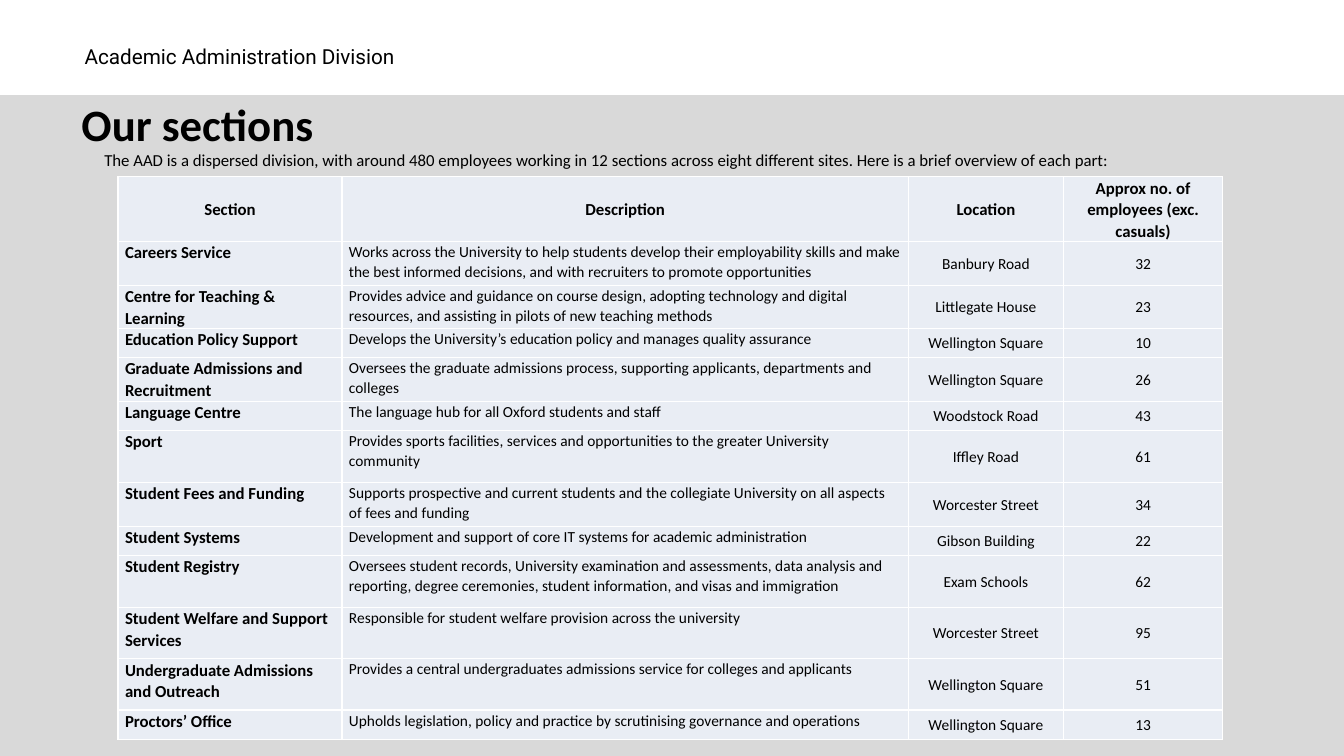
from lxml.etree import SubElement
from pptx import Presentation
from pptx.dml.color import RGBColor
from pptx.enum.shapes import MSO_SHAPE as Shape
from pptx.enum.text import MSO_ANCHOR as Anchor, MSO_AUTO_SIZE as AutoSize, PP_ALIGN as Align
from pptx.oxml.ns import qn
from pptx.util import Pt

HEADINGS = ("Section", "Description", "Location", "Approx no. of employees (exc. casuals)")
COLUMN_WIDTHS = (160, 404.6, 110.8, 113.7)
HEADING_HEIGHT = 36.7
ONE_LINE, TWO_LINES, TALL, ROOMY = 20.8, 31.3, 37.2, 36.7
SECTIONS = (
    (TWO_LINES, "Careers Service",
     "Works across the University to help students develop their employability skills and "
     "make the best informed decisions, and with recruiters to promote opportunities",
     "Banbury Road", 32),
    (ONE_LINE, "Centre for Teaching & Learning",
     "Provides advice and guidance on course design, adopting technology and digital "
     "resources, and assisting in pilots of new teaching methods",
     "Littlegate House", 23),
    (ONE_LINE, "Education Policy Support",
     "Develops the University’s education policy and manages quality assurance",
     "Wellington Square", 10),
    (TWO_LINES, "Graduate Admissions and Recruitment",
     "Oversees the graduate admissions process, supporting applicants, departments and colleges",
     "Wellington Square", 26),
    (ONE_LINE, "Language Centre",
     "The language hub for all Oxford students and staff",
     "Woodstock Road", 43),
    (TALL, "Sport",
     "Provides sports facilities, services and opportunities to the greater University community",
     "Iffley Road", 61),
    (TWO_LINES, "Student Fees and Funding",
     "Supports prospective and current students and the collegiate University on all aspects "
     "of fees and funding",
     "Worcester Street", 34),
    (ONE_LINE, "Student Systems",
     "Development and support of core IT systems for academic administration",
     "Gibson Building", 22),
    (TALL, "Student Registry",
     "Oversees student records, University examination and assessments, data analysis and "
     "reporting, degree ceremonies, student information, and visas and immigration",
     "Exam Schools", 62),
    (ROOMY, "Student Welfare and Support Services",
     "Responsible for student welfare provision across the university",
     "Worcester Street", 95),
    (ROOMY, "Undergraduate Admissions and Outreach",
     "Provides a central undergraduates admissions service for colleges and applicants",
     "Wellington Square", 51),
    (ONE_LINE, "Proctors’ Office",
     "Upholds legislation, policy and practice by scrutinising governance and operations",
     "Wellington Square", 13),
)


def colour(value):
    return RGBColor.from_string(value)


class SectionsSlide:
    """Draws styled elements on one slide, with all lengths in points."""

    ink, panel_fill, cell_fill, border = "000000", "D9D9D9", "E9EDF4", "FFFFFF"
    body_font, banner_font = "Calibri", "Roboto"

    def __init__(self, deck):
        self.slide = deck.slides.add_slide(deck.slide_layouts[5])
        self.shapes = self.slide.shapes

    def set_words(self, frame, words, size, bold=False, font=body_font, align=Align.LEFT):
        paragraph = frame.paragraphs[0]
        paragraph.text = words
        paragraph.alignment = align
        paragraph.font.name = font
        paragraph.font.size = Pt(size)
        paragraph.font.bold = bold
        paragraph.font.color.rgb = colour(self.ink)
        return paragraph

    def panel(self, left, top, width, height):
        panel = self.shapes.add_shape(Shape.RECTANGLE, Pt(left), Pt(top), Pt(width), Pt(height))
        panel.shadow.inherit = False
        panel.fill.solid()
        panel.fill.fore_color.rgb = colour(self.panel_fill)
        panel.line.fill.background()
        self.shapes.element.insert(2, panel.element)

    def title(self, words, left, top, width, height):
        title = self.shapes.title
        title.left, title.top, title.width, title.height = map(Pt, (left, top, width, height))
        title.text_frame.auto_size = AutoSize.NONE
        title.text_frame.vertical_anchor = Anchor.MIDDLE
        self.set_words(title.text_frame, words, 32, bold=True)

    def text(self, words, left, top, width, height, size, font=body_font, wrap=True):
        box = self.shapes.add_textbox(Pt(left), Pt(top), Pt(width), Pt(height))
        box.text_frame.word_wrap = wrap
        self.set_words(box.text_frame, words, size, font=font)

    def cell(self, cell, words, size, bold, centred):
        cell.margin_left = cell.margin_right = Pt(5)
        cell.margin_top = cell.margin_bottom = 0
        cell.vertical_anchor = Anchor.MIDDLE if centred else Anchor.TOP
        align = Align.CENTER if centred else Align.LEFT
        self.set_words(cell.text_frame, words, size, bold, align=align).line_spacing = 1.07
        properties = cell._tc.get_or_add_tcPr()
        for side in ("a:lnL", "a:lnR", "a:lnT", "a:lnB"):
            line = SubElement(properties, qn(side), w=str(Pt(1)))
            SubElement(SubElement(line, qn("a:solidFill")), qn("a:srgbClr"), val=self.border)
        cell.fill.solid()
        cell.fill.fore_color.rgb = colour(self.cell_fill)

    def table(self, left, top, headings, sections, widths):
        heights = [HEADING_HEIGHT] + [section[0] for section in sections]
        table = self.shapes.add_table(len(heights), len(widths), Pt(left), Pt(top),
                                      Pt(sum(widths)), Pt(sum(heights))).table
        table.horz_banding = False
        for column, width in zip(table.columns, widths):
            column.width = Pt(width)
        for row, height in zip(table.rows, heights):
            row.height = Pt(height)
        for column, heading in enumerate(headings):
            self.cell(table.cell(0, column), heading, 12, bold=True, centred=True)
        for row, (_, *values) in enumerate(sections, 1):
            for column, value in enumerate(values):
                is_name = column == 0
                self.cell(table.cell(row, column), str(value), 12 if is_name else 11,
                          bold=is_name, centred=column > 1)


def main():
    deck = Presentation()
    deck.slide_width, deck.slide_height = Pt(960), Pt(540)
    page = SectionsSlide(deck)
    page.panel(0, 68, 960, 472)
    page.text("Academic Administration Division", 53.4, 28, 560, 25, 14.8, font=page.banner_font)
    page.title("Our sections", 51, 65, 888, 46)
    page.table(84.3, 126.2, HEADINGS, SECTIONS, COLUMN_WIDTHS)
    page.text("The AAD is a dispersed division, with around 480 employees working in 12 sections "
              "across eight different sites. Here is a brief overview of each part:",
              67.4, 103.7, 750, 21.6, 12, wrap=False)
    deck.save("out.pptx")


if __name__ == "__main__":
    main()
